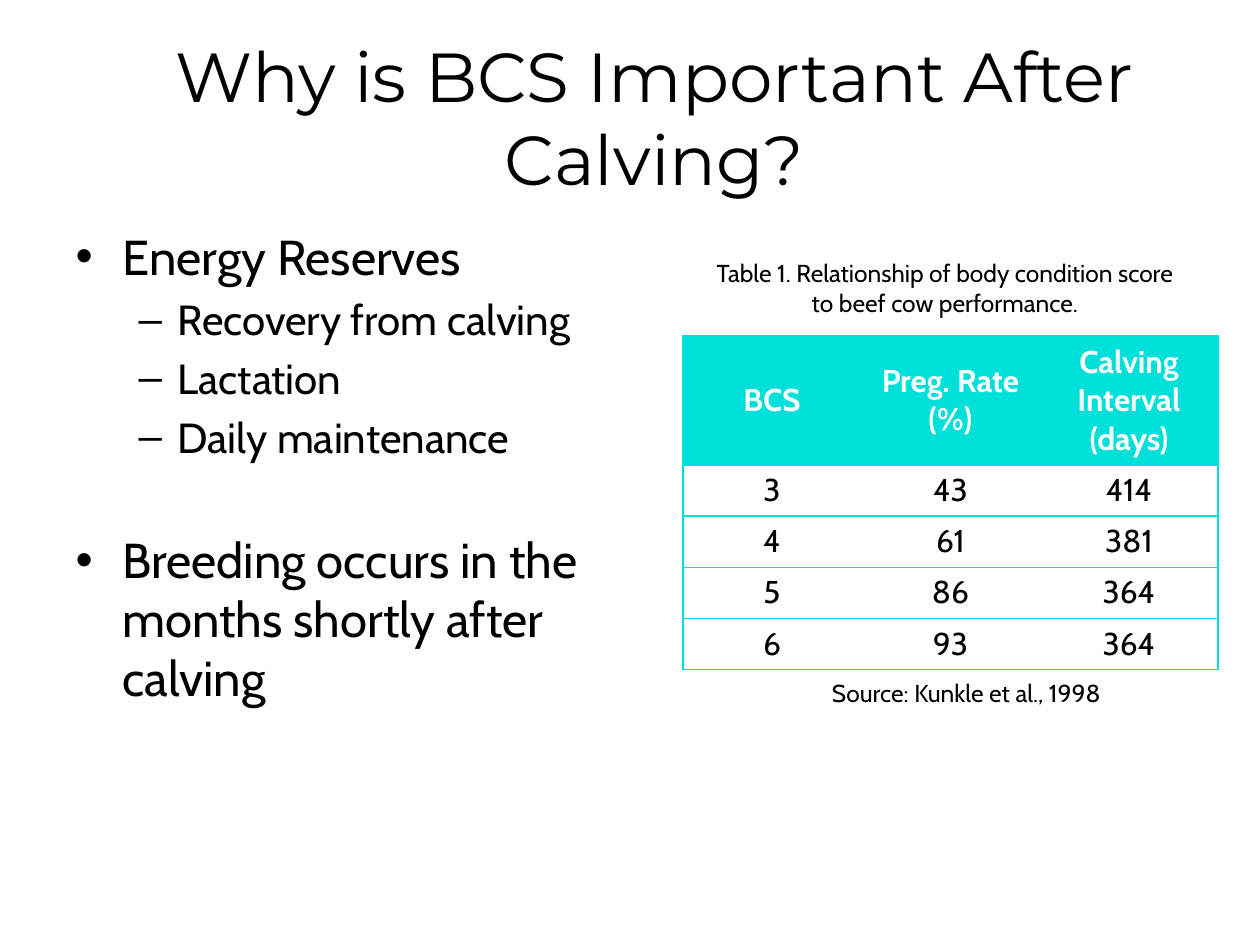
"""Build a slide on body condition score after calving, with bullets and a table."""
from lxml import etree
from pptx import Presentation, util as u
from pptx.dml.color import RGBColor
from pptx.enum import text
from pptx.oxml.ns import qn

INK = {"text": "000000", "head": "FFFFFF", "cell": "FFFFFF", "line": "00E0DB"}
ALIGN, MID = text.PP_ALIGN, text.MSO_ANCHOR.MIDDLE


def px(*sizes):
    return [u.Emu(round(n * 914400 / 126)) for n in sizes]


def style(para, size, face="Cabin", ink="text", bold=False, align=ALIGN.CENTER):
    para.alignment = align
    for run in para.runs:
        run.font.size, run.font.name, run.font.bold = u.Pt(size), face, bold
        run.font.color.rgb = RGBColor.from_string(INK[ink])


deck = Presentation()
deck.slide_width, deck.slide_height = px(1260, 945)
slide = deck.slides.add_slide(deck.slide_layouts[1])

title, body = slide.placeholders
title.left, title.top, title.width, title.height = px(112, 38, 1085, 157)
title.text_frame.text = "Why is BCS Important After Calving?"
title.text_frame.vertical_anchor = MID
title.text_frame.auto_size = text.MSO_AUTO_SIZE.NONE
style(title.text_frame.paragraphs[0], 39.6, "Montserrat")

body.left, body.top, body.width, body.height = px(63, 220, 609, 624)
frame = body.text_frame
frame.auto_size = text.MSO_AUTO_SIZE.NONE
points = [
    ("Energy Reserves", 0, 0),
    ("Recovery from calving", 1, 4.8),
    ("Lactation", 1, 4.8),
    ("Daily maintenance", 1, 4.8),
    ("Breeding occurs in the months shortly after calving", 0, 39),
]
levels = [("•", 47, -47, 28), ("–", 102, -39, 24)]
frame.text = "\n".join(point[0] for point in points)
for para, (_, level, gap) in zip(frame.paragraphs, points):
    mark, left, hang, size = levels[level]
    para.level = level
    para.space_before = u.Pt(gap)
    props = para._p.get_or_add_pPr()
    for key, value in zip(("marL", "indent"), px(left, hang)):
        props.set(key, str(value))
    etree.SubElement(props, qn("a:buFont")).set("typeface", "Arial")
    etree.SubElement(props, qn("a:buChar")).set("char", mark)
    style(para, size, align=ALIGN.LEFT)

rows = [
    ("BCS", "Preg. Rate (%)", "Calving Interval (days)"),
    ("3", "43", "414"),
    ("4", "61", "381"),
    ("5", "86", "364"),
    ("6", "93", "364"),
]
grid = slide.shapes.add_table(5, 3, *px(683, 336, 535, 333)).table
grid.first_row = grid.horz_banding = False
for col, wide in zip(grid.columns, px(178, 179, 178)):
    col.width = wide
for row, tall in zip(grid.rows, px(129, 51, 51, 51, 51)):
    row.height = tall
for r, words in enumerate(rows):
    for c, word in enumerate(words):
        cell = grid.cell(r, c)
        cell.text = word
        cell.vertical_anchor = MID
        style(cell.text_frame.paragraphs[0], 18, ink="text" if r else "head", bold=r == 0)
        props = cell._tc.get_or_add_tcPr()
        for side, shown in (("L", c == 0), ("R", c == 2), ("T", True), ("B", True)):
            edge = etree.SubElement(props, qn("a:ln" + side), w=str(u.Pt(0.75)))
            if shown:
                fill = etree.SubElement(edge, qn("a:solidFill"))
                etree.SubElement(fill, qn("a:srgbClr"), val=INK["line"])
            else:
                etree.SubElement(edge, qn("a:noFill"))
        cell.fill.solid()
        cell.fill.fore_color.rgb = RGBColor.from_string(INK["cell" if r else "line"])

notes = [
    ("Table 1. Relationship of body condition score to beef cow performance.", 693, 252, 504, 72),
    ("Source: Kunkle et al., 1998", 746, 672, 441, 43),
]
for words, *place in notes:
    frame = slide.shapes.add_textbox(*px(*place)).text_frame
    frame.word_wrap = True
    frame.text = words
    style(frame.paragraphs[0], 14)

deck.save("out.pptx")
